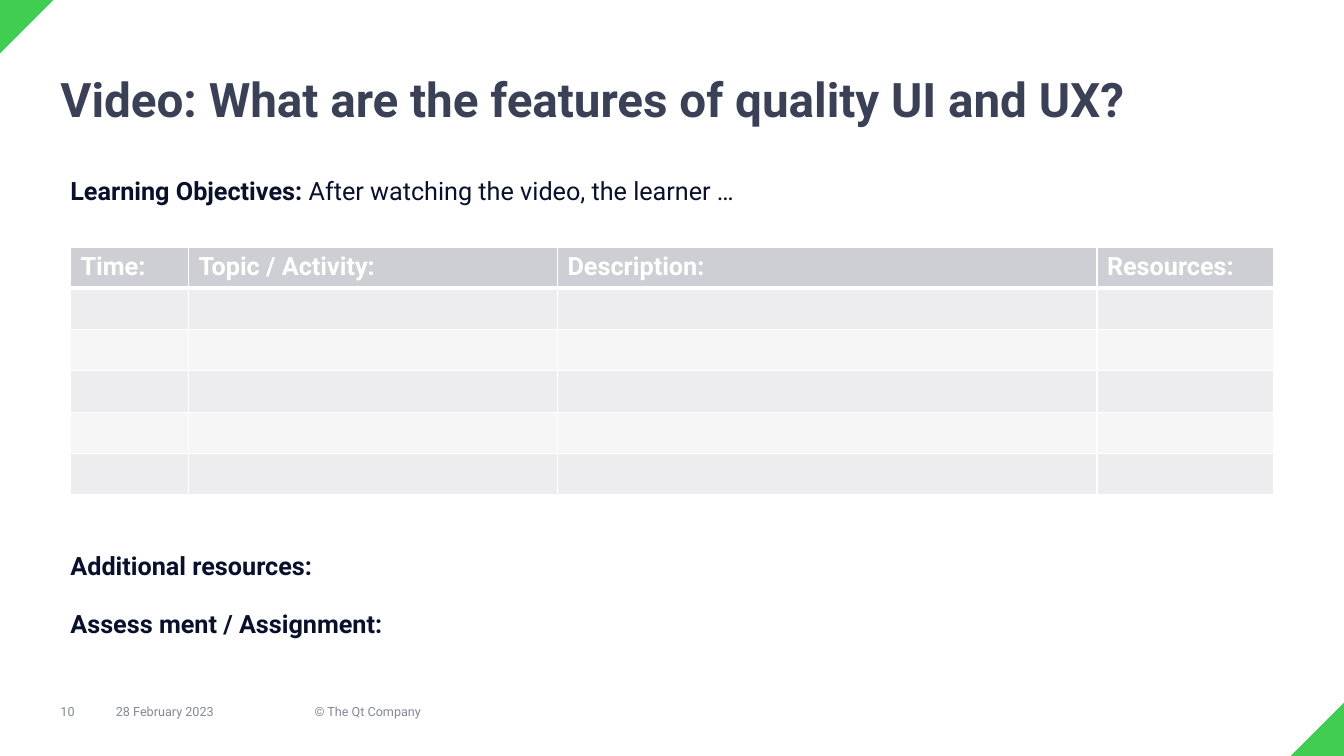
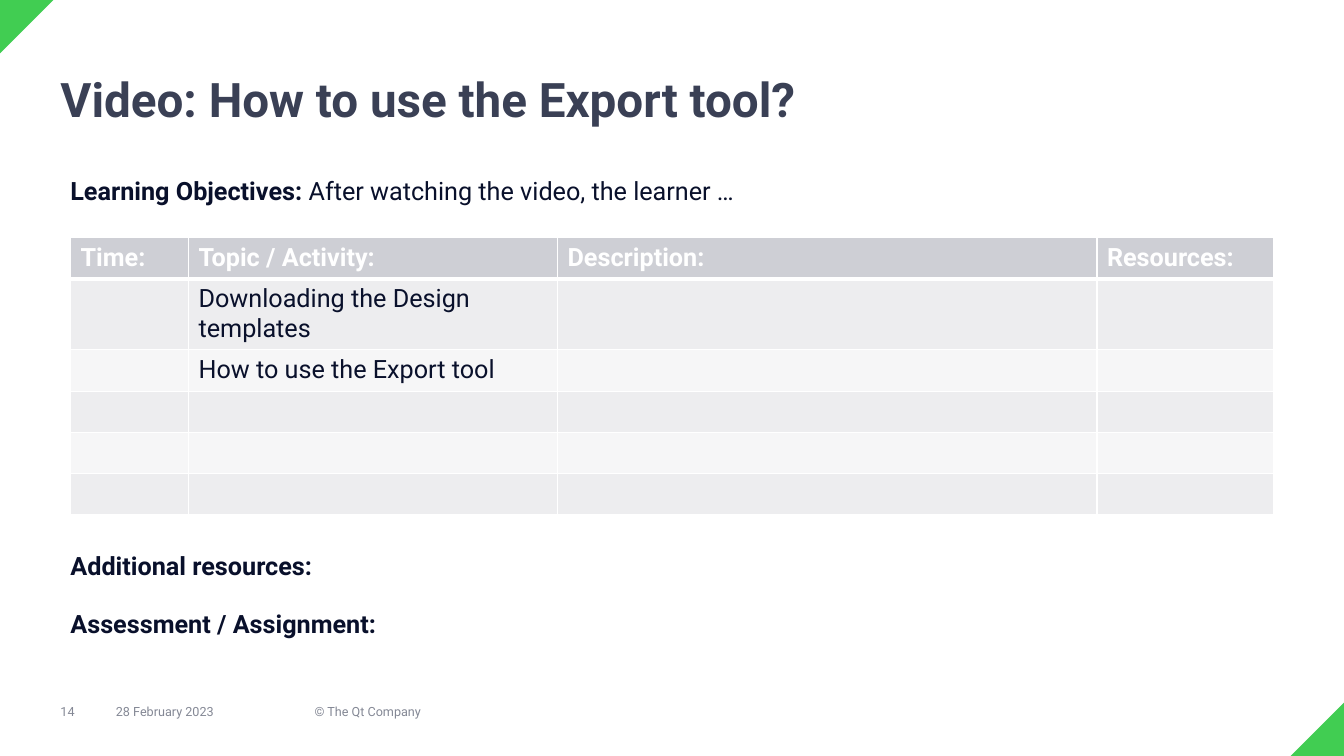
"""Build two lesson-plan slides that share one frame, title style and table."""
from itertools import accumulate

from lxml.etree import SubElement
from pptx import Presentation
from pptx.dml.color import RGBColor
from pptx.enum.shapes import MSO_SHAPE as Shape
from pptx.enum.text import MSO_ANCHOR as Anchor, MSO_AUTO_SIZE as AutoSize, PP_ALIGN as Align
from pptx.oxml.ns import qn
from pptx.util import Inches, Pt

WIDTH, HEIGHT = 13.33, 7.5
LEFT, CONTENT_WIDTH = 0.6, 12.13
FONT = "Roboto"
GREEN, SLATE, NAVY, GREY, WHITE = "41CD52", "3A4055", "09102B", "848895", "FFFFFF"
HEADER_FILL, BAND_FILLS = "CECFD5", ("EDEDEF", "F6F6F7")

CORNER = 0.53
FOOTER_TOP, FOOTER_HEIGHT = 6.98, 0.16
FOOTER_WIDTHS = (0.55, 1.97, 9.61)
DATE, COPYRIGHT = "28 February 2023", "© The Qt Company"

LABEL_WIDTH, LABEL_HEIGHT = 8, 0.4
TABLE_LEFT, ROW_HEIGHT, ROW_COUNT = 0.7, 0.41, 6
COLUMNS = {"Time:": 1.17, "Topic / Activity:": 3.66, "Description:": 5.35, "Resources:": 1.75}
TOPIC_COLUMN = 1

LESSONS = (
    {"number": 10, "title": "Video: What are the features of quality UI and UX?",
     "table_top": 2.45, "topics": (), "assignment": "Assess ment / Assignment:"},
    {"number": 14, "title": "Video: How to use the Export tool?",
     "table_top": 2.36, "topics": ("Downloading the Design templates", "How to use the Export tool"),
     "assignment": "Assessment / Assignment:"},
)


def color(code):
    """Turn a hex string into a colour."""
    return RGBColor.from_string(code)


def write(para, text, size=18, fill=NAVY, bold=False):
    """Add a formatted span of text to a paragraph."""
    span = para.add_run()
    span.text = text
    span.font.name = FONT
    span.font.size = Pt(size)
    span.font.bold = bold
    span.font.color.rgb = color(fill)


def clear_margins(frame):
    """Remove the inner margins of a text frame."""
    frame.margin_left = frame.margin_top = frame.margin_right = frame.margin_bottom = 0


def add_box(page, left, top, width, height):
    """Add a wrapping text box and return its text frame."""
    box = page.shapes.add_textbox(Inches(left), Inches(top), Inches(width), Inches(height))
    box.text_frame.word_wrap = True
    return box.text_frame


def add_corner(page, left, top, rotation):
    """Add a green triangle in a corner of the slide."""
    corner = page.shapes.add_shape(
        Shape.RIGHT_TRIANGLE, Inches(left), Inches(top), Inches(CORNER), Inches(CORNER))
    corner.rotation = rotation
    corner.shadow.inherit = False
    corner.fill.solid()
    corner.fill.fore_color.rgb = color(GREEN)
    corner.line.fill.background()


def add_footer(page, number):
    """Add the slide number, date and copyright side by side."""
    lefts = accumulate(FOOTER_WIDTHS, initial=LEFT)
    for text, left, width in zip((str(number), DATE, COPYRIGHT), lefts, FOOTER_WIDTHS):
        frame = add_box(page, left, FOOTER_TOP, width, FOOTER_HEIGHT)
        clear_margins(frame)
        frame.vertical_anchor = Anchor.MIDDLE
        write(frame.paragraphs[0], text, size=9, fill=GREY)


def set_title(page, text):
    """Move and format the title placeholder."""
    title = page.shapes.title
    title.left, title.top = Inches(LEFT), Inches(0.76)
    title.width, title.height = Inches(CONTENT_WIDTH), Inches(1.02)
    frame = title.text_frame
    clear_margins(frame)
    frame.auto_size = AutoSize.NONE
    frame.vertical_anchor = Anchor.TOP
    para = frame.paragraphs[0]
    para.alignment = Align.LEFT
    para.line_spacing = 0.9
    write(para, text, size=34, fill=SLATE, bold=True)


def add_label(page, top, label, text=""):
    """Add a bold label, followed by plain text if there is any."""
    frame = add_box(page, LEFT, top, LABEL_WIDTH, LABEL_HEIGHT)
    frame.auto_size = AutoSize.SHAPE_TO_FIT_TEXT
    write(frame.paragraphs[0], label, bold=True)
    if text:
        write(frame.paragraphs[0], text)


def set_borders(cell, **weights):
    """Draw white cell borders with the given weights in points."""
    properties = cell._tc.get_or_add_tcPr()
    for side, weight in weights.items():
        line = SubElement(properties, qn(f"a:ln{side}"), w=str(Pt(weight)))
        SubElement(SubElement(line, qn("a:solidFill")), qn("a:srgbClr"), val=WHITE)


def format_cell(cell, row):
    """Set the borders and the header or band fill of a cell."""
    set_borders(cell, L=1, R=1, T=3 if row == 1 else 1, B=3 if row == 0 else 1)
    cell.fill.solid()
    cell.fill.fore_color.rgb = color(BAND_FILLS[(row - 1) % 2] if row else HEADER_FILL)


def add_plan(page, top, topics):
    """Add the lesson-plan table with its topics."""
    plan = page.shapes.add_table(
        ROW_COUNT, len(COLUMNS), Inches(TABLE_LEFT), Inches(top),
        Inches(sum(COLUMNS.values())), Inches(ROW_HEIGHT * ROW_COUNT)).table
    for row in range(ROW_COUNT):
        plan.rows[row].height = Inches(ROW_HEIGHT)
        for column in range(len(COLUMNS)):
            format_cell(plan.cell(row, column), row)
    for column, (heading, width) in enumerate(COLUMNS.items()):
        plan.columns[column].width = Inches(width)
        write(plan.cell(0, column).text_frame.paragraphs[0], heading, fill=WHITE, bold=True)
    for row, topic in enumerate(topics, start=1):
        write(plan.cell(row, TOPIC_COLUMN).text_frame.paragraphs[0], topic)


def add_lesson(deck, number, title, table_top, topics, assignment):
    """Add one lesson-plan slide."""
    page = deck.slides.add_slide(deck.slide_layouts.get_by_name("Title Only"))
    add_corner(page, 0, 0, 90)
    add_corner(page, WIDTH - CORNER, HEIGHT - CORNER, 270)
    set_title(page, title)
    add_footer(page, number)
    add_label(page, 1.69, "Learning Objectives: ", "After watching the video, the learner …")
    add_plan(page, table_top, topics)
    add_label(page, 5.41, "Additional resources:")
    add_label(page, 5.99, assignment)


def main():
    """Build and save the deck."""
    deck = Presentation()
    deck.slide_width, deck.slide_height = Inches(WIDTH), Inches(HEIGHT)
    for lesson in LESSONS:
        add_lesson(deck, **lesson)
    deck.save("out.pptx")


if __name__ == "__main__":
    main()
